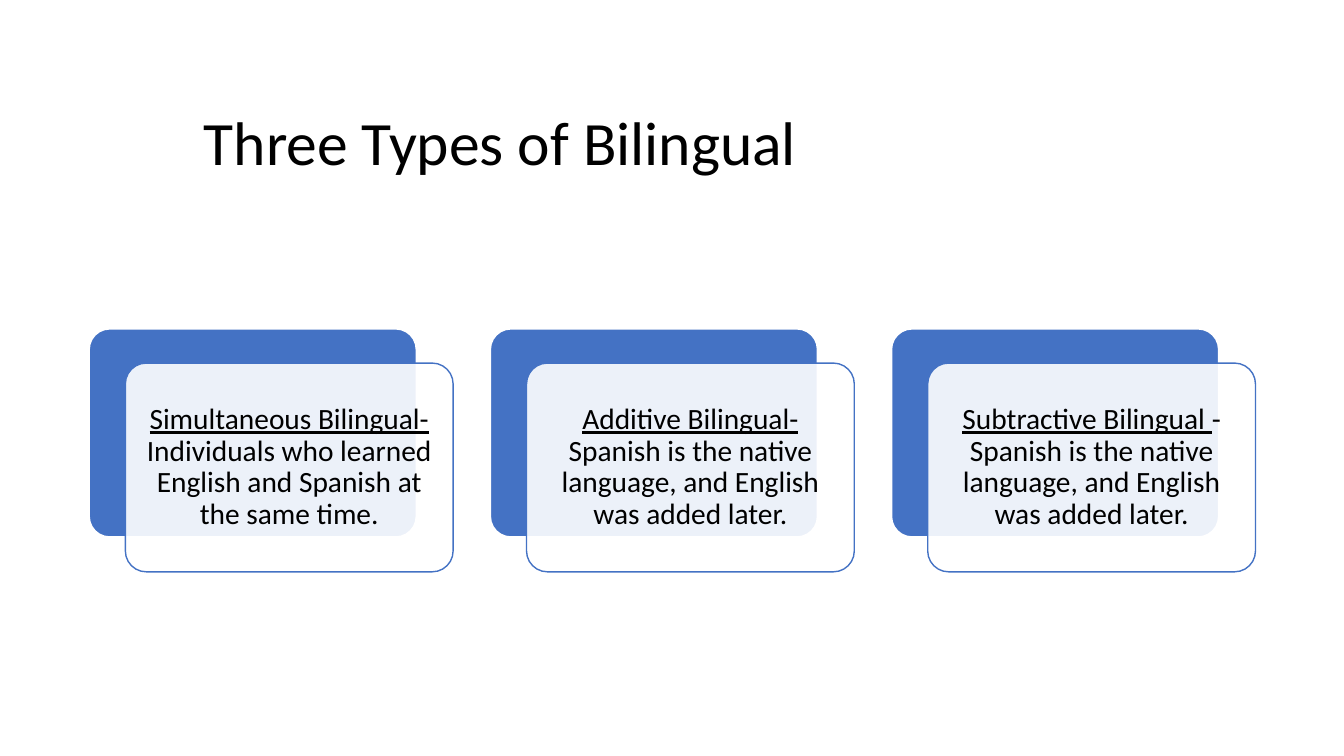
"""Build a slide with three overlapping cards that define types of bilingual."""
import dataclasses

import lxml.etree
import pptx
import pptx.dml.color
import pptx.enum.shapes
import pptx.enum.text
import pptx.oxml.ns
import pptx.util
from pptx.util import Cm


@dataclasses.dataclass(frozen=True)
class Theme:
    """Colours, font and type sizes of the slide."""
    blue: str = "4472C4"
    white: str = "FFFFFF"
    black: str = "000000"
    font: str = "Calibri"
    title_size: int = 44
    card_size: int = 21
    line_spacing: float = 0.9


THEME = Theme()
CARD_WIDTH, CARD_HEIGHT = Cm(8.26), Cm(5.26)
CARD_LEFT, CARD_TOP = Cm(2.24), Cm(8.28)
CARD_PITCH = Cm(10.11)
FRONT_SHIFT_X, FRONT_SHIFT_Y = Cm(0.92), Cm(0.87)
CARD_INSET = Cm(0.23)
CARDS = [
    ("Simultaneous Bilingual- ",
     "Individuals who learned English and Spanish at the same time."),
    ("Additive Bilingual- ",
     "Spanish is the native language, and English was added later."),
    ("Subtractive Bilingual ",
     "- Spanish is the native language, and English was added later."),
]


def rgb(colour):
    """Return a colour object for a hexadecimal string."""
    return pptx.dml.color.RGBColor.from_string(colour)


def format_run(run, size, underline=False):
    """Give a run the theme font, its size and its underline."""
    run.font.name = THEME.font
    run.font.size = pptx.util.Pt(size)
    run.font.color.rgb = rgb(THEME.black)
    run.font.underline = underline


def set_opacity(shape, percent):
    """Make the solid fill of a shape partly transparent."""
    colour = shape.fill._xPr.find(".//" + pptx.oxml.ns.qn("a:srgbClr"))
    alpha = lxml.etree.SubElement(colour, pptx.oxml.ns.qn("a:alpha"))
    alpha.set("val", str(percent * 1000))


def set_title(slide, text):
    """Place and format the slide title."""
    title = slide.shapes.title
    title.left, title.top = Cm(4.88), Cm(2.21)
    title.width, title.height = Cm(24.1), Cm(2.92)
    frame = title.text_frame
    frame.text = text
    frame.vertical_anchor = pptx.enum.text.MSO_ANCHOR.MIDDLE
    paragraph = frame.paragraphs[0]
    paragraph.alignment = pptx.enum.text.PP_ALIGN.LEFT
    paragraph.line_spacing = THEME.line_spacing
    format_run(paragraph.runs[0], THEME.title_size)


def add_panel(slide, left, top, fill, line, line_width):
    """Add one rounded panel of the card size."""
    panel = slide.shapes.add_shape(
        pptx.enum.shapes.MSO_SHAPE.ROUNDED_RECTANGLE,
        left, top, CARD_WIDTH, CARD_HEIGHT)
    panel.adjustments[0] = 0.1
    panel.shadow.inherit = False
    panel.fill.solid()
    panel.fill.fore_color.rgb = rgb(fill)
    panel.line.color.rgb = rgb(line)
    panel.line.width = pptx.util.Pt(line_width)
    return panel


def write_definition(panel, term, meaning):
    """Write an underlined term and its meaning in a panel."""
    frame = panel.text_frame
    frame.word_wrap = True
    frame.vertical_anchor = pptx.enum.text.MSO_ANCHOR.MIDDLE
    frame.margin_left = frame.margin_right = CARD_INSET
    frame.margin_top = frame.margin_bottom = CARD_INSET
    paragraph = frame.paragraphs[0]
    paragraph.alignment = pptx.enum.text.PP_ALIGN.CENTER
    paragraph.line_spacing = THEME.line_spacing
    for text, underline in ((term, True), (meaning, False)):
        run = paragraph.add_run()
        run.text = text
        format_run(run, THEME.card_size, underline)


def add_card(slide, left, top, term, meaning):
    """Add a blue back panel and a translucent front panel with text."""
    add_panel(slide, left, top, THEME.blue, THEME.white, 1.5)
    front = add_panel(slide, left + FRONT_SHIFT_X, top + FRONT_SHIFT_Y,
                      THEME.white, THEME.blue, 1)
    set_opacity(front, 90)
    write_definition(front, term, meaning)


def main():
    """Build and save the presentation."""
    presentation = pptx.Presentation()
    presentation.slide_width, presentation.slide_height = Cm(33.87), Cm(19.05)
    slide = presentation.slides.add_slide(presentation.slide_layouts[5])
    set_title(slide, "Three Types of Bilingual")
    for index, (term, meaning) in enumerate(CARDS):
        add_card(slide, CARD_LEFT + index * CARD_PITCH, CARD_TOP, term, meaning)
    presentation.save("out.pptx")


if __name__ == "__main__":
    main()
